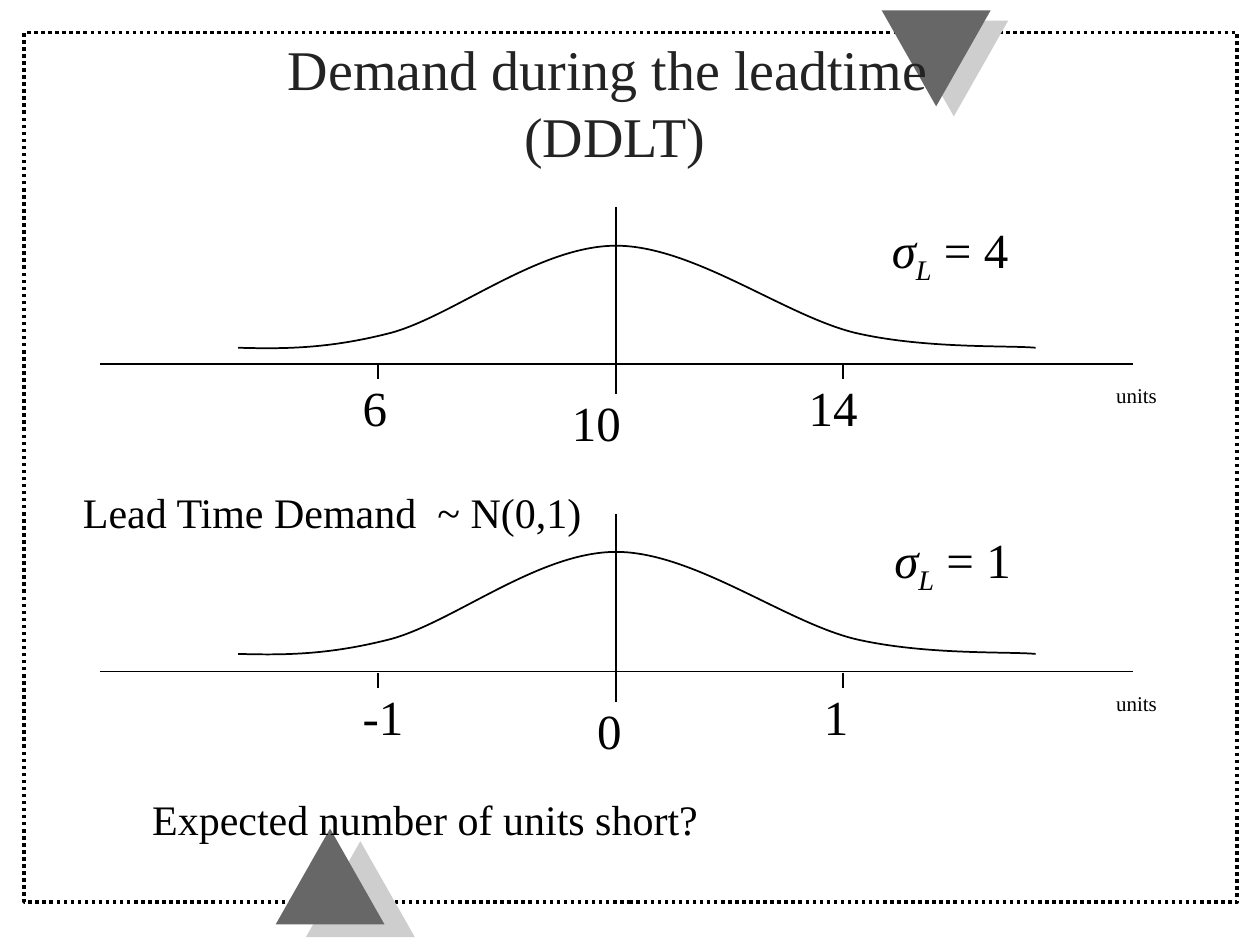
from pptx import Presentation
from pptx.dml.color import RGBColor
from pptx.enum.dml import MSO_LINE
from pptx.enum.shapes import MSO_CONNECTOR, MSO_SHAPE
from pptx.enum.text import MSO_ANCHOR, MSO_AUTO_SIZE, PP_ALIGN
from pptx.oxml.ns import qn
from pptx.util import Inches, Pt
from lxml import etree

STRAIGHT = MSO_CONNECTOR.STRAIGHT
RECTANGLE = MSO_SHAPE.RECTANGLE
TRIANGLE = MSO_SHAPE.ISOSCELES_TRIANGLE
DOTTED = MSO_LINE.ROUND_DOT
MIDDLE = MSO_ANCHOR.MIDDLE
TOP = MSO_ANCHOR.TOP
FIT_SHAPE = MSO_AUTO_SIZE.SHAPE_TO_FIT_TEXT
NO_FIT = MSO_AUTO_SIZE.NONE
CENTER = PP_ALIGN.CENTER
LEFT = PP_ALIGN.LEFT

BLACK = RGBColor(0x00, 0x00, 0x00)
TITLE_GREY = RGBColor(0x23, 0x23, 0x23)
LIGHT_GREY = RGBColor(0xCE, 0xCE, 0xCE)
DARK_GREY = RGBColor(0x67, 0x67, 0x67)
FONT = "Times New Roman"

TITLE = "Demand during the leadtime \v(DDLT)"
NOTES = [
    ("Lead Time Demand  ~ N(0,1)", (0.56, 3.81, 4.19, 0.5)),
    ("Expected number of units short?", (1.11, 6.25, 4.57, 0.5)),
]
TRIANGLES = [
    (7.15, 0.17, 180, LIGHT_GREY),
    (7.01, 0.09, 180, DARK_GREY),
    (2.44, 6.69, 0, LIGHT_GREY),
    (2.2, 6.59, 0, DARK_GREY),
]
TRIANGLE_SIZE = (0.84, 0.74)

PANELS = [
    {"sigma": " = 4", "sigma_at": (6.98, -1.2), "curve_shift": 0, "tick_shift": 0,
     "labels": [("6", 2.78, 0.06, 0.4), ("10", 4.44, 0.18, 0.59), ("14", 6.32, 0.06, 0.59)]},
    {"sigma": " = 1", "sigma_at": (7.0, -1.18), "curve_shift": -0.01, "tick_shift": 0.01,
     "labels": [("-1", 2.78, 0.07, 0.53), ("0", 4.64, 0.18, 0.4), ("1", 6.44, 0.07, 0.4)]},
]
FIRST_AXIS, PANEL_STEP = 2.89, 2.44
AXIS_LEFT, AXIS_RIGHT, MEAN = 0.79, 8.99, 4.89
TICKS, TICK_LENGTH = (3.0, 6.69), 0.12
CURVE_START = (1.89, -0.13)
CURVE_SEGMENTS = [
    ((2.25, -0.12), (2.61, -0.12), (3.11, -0.25)),
    ((3.61, -0.39), (4.28, -0.94), (4.89, -0.94)),
    ((5.5, -0.94), (6.22, -0.39), (6.78, -0.25)),
    ((7.33, -0.12), (8.0, -0.15), (8.22, -0.13)),
]


def format_text(box, spans, size=28, color=BLACK, align=LEFT, anchor=TOP, wrap=False, fit=FIT_SHAPE):
    frame = box.text_frame
    frame.word_wrap = wrap
    frame.auto_size = fit
    frame.vertical_anchor = anchor
    para = frame.paragraphs[0]
    para.alignment = align
    for text, italic, baseline in spans:
        for number, piece in enumerate(text.split("\v")):
            if number:
                para.add_line_break()
            span = para.add_run()
            span.text = piece
            span.font.name = FONT
            span.font.size = Pt(size)
            span.font.italic = italic
            span.font.color.rgb = color
            if baseline:
                span.font._element.set("baseline", str(baseline * 1000))


def add_text(page, spans, place, **style):
    box = page.shapes.add_textbox(*map(Inches, place))
    format_text(box, spans, **style)


def add_line(page, start, end):
    line = page.shapes.add_connector(STRAIGHT, *map(Inches, start + end))
    line.line.color.rgb = BLACK
    line.line.width = Pt(1)
    etree.SubElement(line._element.spPr, qn("a:effectLst"))


def outline(shape, color, width):
    shape.shadow.inherit = False
    shape.line.color.rgb = color
    shape.line.width = Pt(width)


def add_frame(page):
    border = page.shapes.add_shape(RECTANGLE, *map(Inches, (0.19, 0.26, 9.63, 6.9)))
    border.fill.background()
    outline(border, BLACK, 2)
    border.line.dash_style = DOTTED
    for left, top, rotation, color in TRIANGLES:
        triangle = page.shapes.add_shape(TRIANGLE, *map(Inches, (left, top) + TRIANGLE_SIZE))
        triangle.rotation = rotation
        triangle.fill.solid()
        triangle.fill.fore_color.rgb = color
        outline(triangle, color, 1)
        etree.SubElement(triangle.line._ln, qn("a:miter"), lim="800000")


def add_title(page):
    title = page.shapes.title
    title.left, title.top, title.width, title.height = map(Inches, (0.42, 0.48, 8.92, 0.65))
    format_text(title, [(TITLE, False, 0)], size=32, color=TITLE_GREY,
                align=CENTER, anchor=MIDDLE, wrap=True, fit=NO_FIT)
    page.shapes._spTree.append(title._element)


def add_bell(page, axis):
    def place(point):
        return Inches(point[0]), Inches(axis + point[1])

    builder = page.shapes.build_freeform(*place(CURVE_START))
    builder.add_line_segments([place(segment[-1]) for segment in CURVE_SEGMENTS], close=False)
    bell = builder.convert_to_shape()
    bell.fill.background()
    outline(bell, BLACK, 1)
    straight_parts = list(bell._element.iter(qn("a:lnTo")))
    for straight, segment in zip(straight_parts, CURVE_SEGMENTS):
        curve = etree.Element(qn("a:cubicBezTo"))
        for x, y in map(place, segment):
            etree.SubElement(curve, qn("a:pt"), x=str(x - bell.left), y=str(y - bell.top))
        straight.getparent().replace(straight, curve)


def add_panel(page, panel, axis):
    add_line(page, (MEAN, axis - 1.25), (MEAN, axis + 0.24))
    add_line(page, (AXIS_LEFT, axis), (AXIS_RIGHT, axis))
    add_text(page, [("units", False, 0)], (8.76, axis + 0.1, 0.53, 0.3), size=12)
    add_bell(page, axis + panel["curve_shift"])
    tick_top = axis + panel["tick_shift"]
    for tick in TICKS:
        add_line(page, (tick, tick_top), (tick, tick_top + TICK_LENGTH))
    for text, left, drop, width in panel["labels"]:
        add_text(page, [(text, False, 0)], (left, axis + drop, width, 0.57))
    left, rise = panel["sigma_at"]
    spans = [("σ", True, 0), ("L", True, -25), (panel["sigma"], False, 0)]
    add_text(page, spans, (left, axis + rise, 1.2, 0.57))


def main():
    deck = Presentation()
    deck.slide_width, deck.slide_height = Inches(10), Inches(7.5)
    page = deck.slides.add_slide(deck.slide_layouts[5])
    add_frame(page)
    add_title(page)
    for number, panel in enumerate(PANELS):
        add_panel(page, panel, FIRST_AXIS + number * PANEL_STEP)
    for text, place in NOTES:
        add_text(page, [(text, False, 0)], place, size=24)
    deck.save("out.pptx")


if __name__ == "__main__":
    main()
